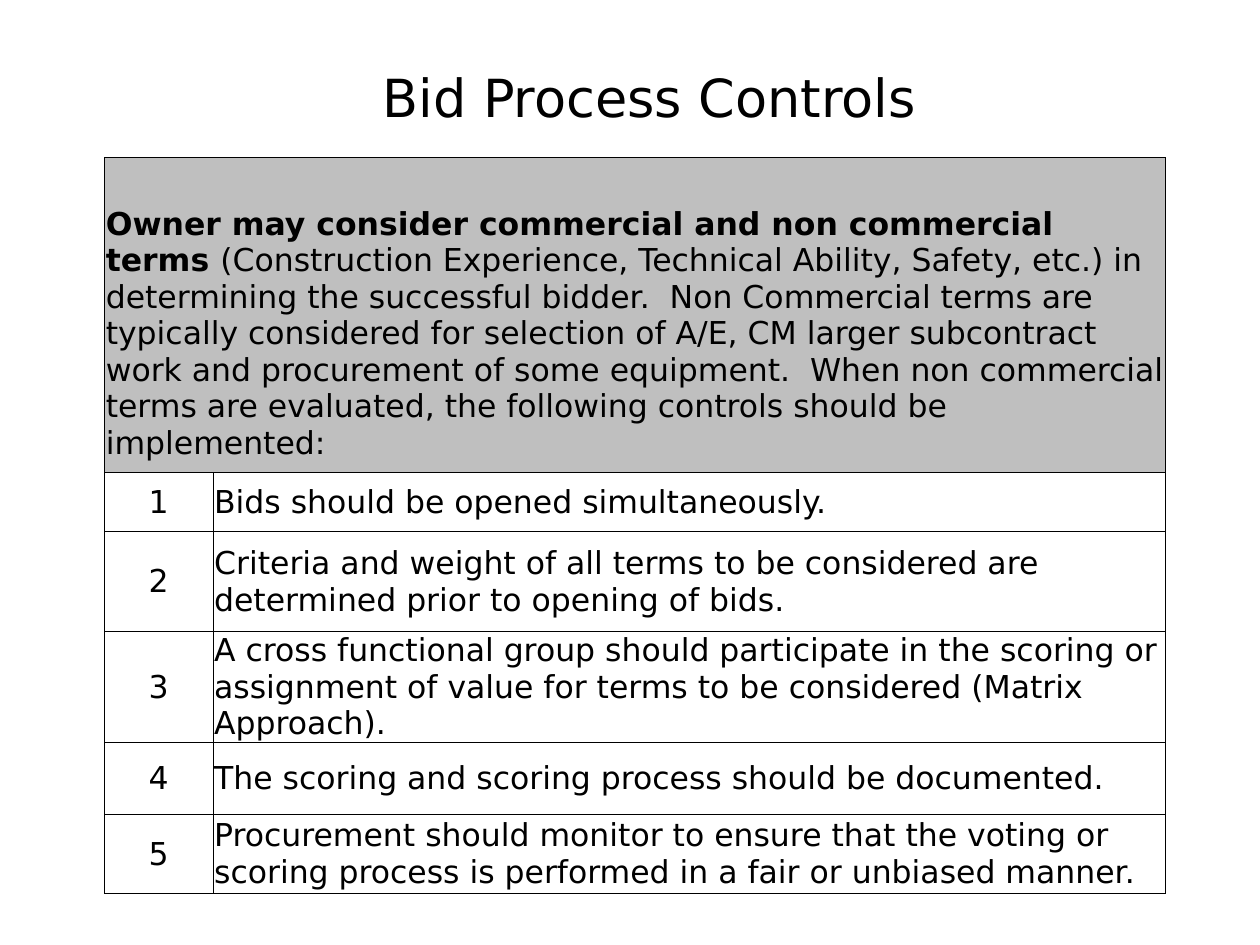
from lxml.etree import SubElement
from pptx import Presentation
from pptx.dml.color import RGBColor
from pptx.enum.text import MSO_ANCHOR as Anchor, PP_ALIGN as Align
from pptx.oxml.ns import qn
from pptx.util import Inches, Pt

FONT = "DejaVu Sans"
BLACK = RGBColor(0x00, 0x00, 0x00)
GRAY = RGBColor(0xBF, 0xBF, 0xBF)
WHITE = RGBColor(0xFF, 0xFF, 0xFF)

COLUMN_WIDTHS = [0.86, 7.56]
ROW_HEIGHTS = [2.5, 0.47, 0.79, 0.76, 0.57, 0.63]
CELL_MARGINS = {"margin_left": 0.01, "margin_right": 0.01, "margin_top": 0.01, "margin_bottom": 0}
HEADER_TOP_MARGIN = 0.3

INTRO = [
    ("Owner may consider commercial and non commercial terms ", True),
    ("(Construction Experience, Technical Ability, Safety, etc.) in determining the "
     "successful bidder.  Non Commercial terms are typically considered for selection of "
     "A/E, CM larger subcontract work and procurement of some equipment.  When non "
     "commercial terms are evaluated, the following controls should be implemented:", False),
]
CONTROLS = [
    "Bids should be opened simultaneously.",
    "Criteria and weight of all terms to be considered are determined prior to opening of bids.",
    "A cross functional group should participate in the scoring or assignment of value "
    "for terms to be considered (Matrix Approach).",
    "The scoring and scoring process should be documented.",
    "Procurement should monitor to ensure that the voting or scoring process is performed "
    "in a fair or unbiased manner.",
]


def add_span(para, text, size, bold=False):
    span = para.add_run()
    span.text = text
    for name, value in {"name": FONT, "size": Pt(size), "bold": bold}.items():
        setattr(span.font, name, value)
    span.font.color.rgb = BLACK


def format_cell(cell, color):
    properties = cell._tc.get_or_add_tcPr()
    for side in ("a:lnL", "a:lnR", "a:lnT", "a:lnB"):
        border = SubElement(properties, qn(side), w=str(Pt(0.5)))
        SubElement(SubElement(border, qn("a:solidFill")), qn("a:srgbClr"), val=str(BLACK))
    cell.fill.solid()
    cell.fill.fore_color.rgb = color
    cell.vertical_anchor = Anchor.MIDDLE
    for name, value in CELL_MARGINS.items():
        setattr(cell, name, Inches(value))


deck = Presentation()
deck.slide_width, deck.slide_height = Inches(10), Inches(7.5)
page = deck.slides.add_slide(deck.slide_layouts[5])

title = page.shapes.title
title_place = {"left": 1.31, "top": 0.42, "width": 7.69, "height": 0.75}
for name, value in title_place.items():
    setattr(title, name, Inches(value))
title.text_frame.vertical_anchor = Anchor.MIDDLE
para = title.text_frame.paragraphs[0]
para.alignment = Align.CENTER
para.line_spacing = 0.9
add_span(para, "Bid Process Controls", 30)

table = page.shapes.add_table(
    len(ROW_HEIGHTS), len(COLUMN_WIDTHS), Inches(0.83), Inches(1.25),
    Inches(sum(COLUMN_WIDTHS)), Inches(sum(ROW_HEIGHTS))).table
table.first_row = False
table.horz_banding = False
for column, width in zip(table.columns, COLUMN_WIDTHS):
    column.width = Inches(width)
for row, height in zip(table.rows, ROW_HEIGHTS):
    row.height = Inches(height)

for cell in table.rows[0].cells:
    format_cell(cell, GRAY)
header = table.cell(0, 0)
header.merge(table.cell(0, 1))
header.margin_top = Inches(HEADER_TOP_MARGIN)
for text, bold in INTRO:
    add_span(header.text_frame.paragraphs[0], text, 18, bold)

for number, control in enumerate(CONTROLS, 1):
    entries = [(str(number), Align.CENTER), (control, Align.LEFT)]
    for cell, (text, alignment) in zip(table.rows[number].cells, entries):
        format_cell(cell, WHITE)
        para = cell.text_frame.paragraphs[0]
        para.alignment = alignment
        add_span(para, text, 18)

deck.save("out.pptx")
